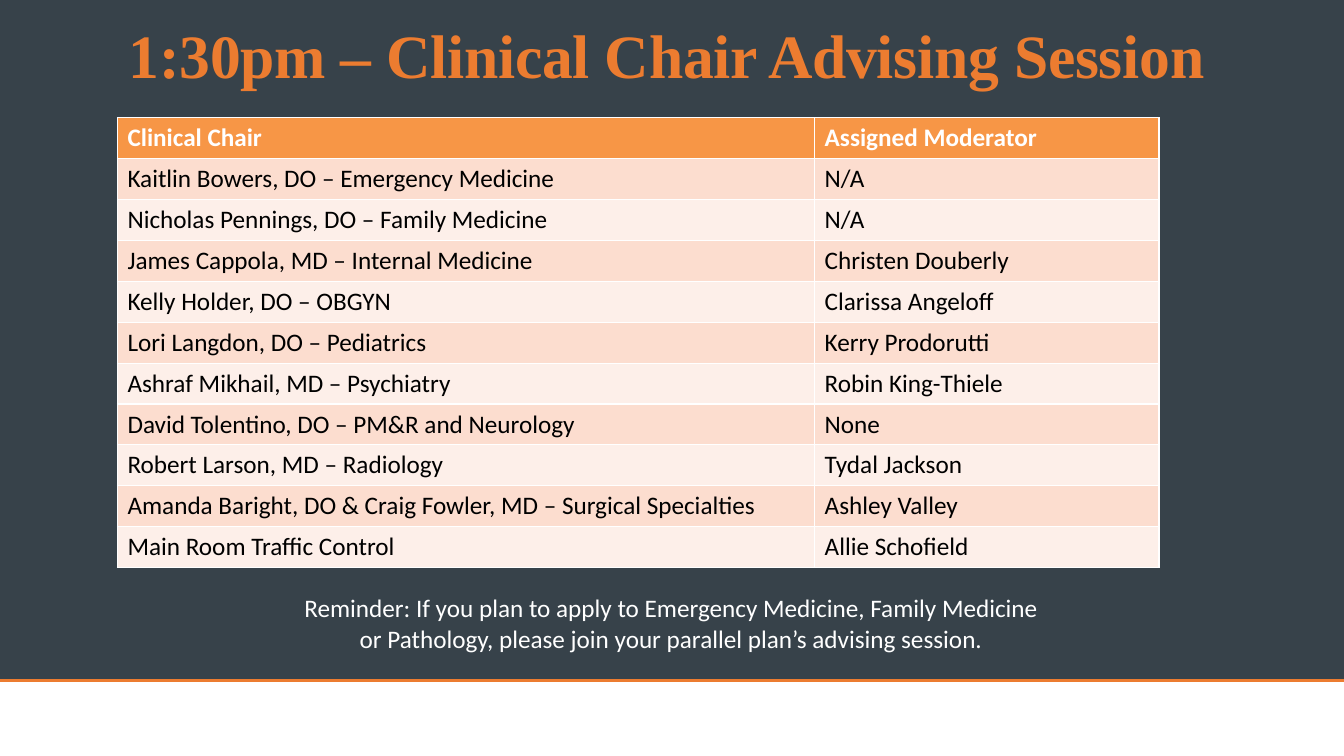
from pptx import Presentation
from pptx.dml.color import RGBColor
from pptx.enum.shapes import MSO_CONNECTOR, MSO_SHAPE
from pptx.enum.text import MSO_ANCHOR, MSO_AUTO_SIZE, PP_ALIGN
from pptx.oxml.ns import qn
from pptx.util import Cm, Pt
from lxml.etree import SubElement

ORANGE, WHITE, BLACK = "EC7C30", "FFFFFF", "000000"
HEADER_FILL, BAND_FILLS = "F79646", ("FDEFE9", "FCDDCF")
SLATE = "37424A"
SLIDE_WIDTH, SLIDE_HEIGHT, FOOTER_TOP = Cm(33.87), Cm(19.05), Cm(17.15)

ASSIGNMENTS = [
    ("Clinical Chair", "Assigned Moderator"),
    ("Kaitlin Bowers, DO – Emergency Medicine", "N/A"),
    ("Nicholas Pennings, DO – Family Medicine", "N/A"),
    ("James Cappola, MD – Internal Medicine", "Christen Douberly"),
    ("Kelly Holder, DO – OBGYN", "Clarissa Angeloff"),
    ("Lori Langdon, DO – Pediatrics", "Kerry Prodorutti"),
    ("Ashraf Mikhail, MD – Psychiatry", "Robin King-Thiele"),
    ("David Tolentino, DO – PM&R and Neurology", "None"),
    ("Robert Larson, MD – Radiology", "Tydal Jackson"),
    ("Amanda Baright, DO & Craig Fowler, MD – Surgical Specialties", "Ashley Valley"),
    ("Main Room Traffic Control", "Allie Schofield"),
]


def paint(fill, color):
    fill.solid()
    fill.fore_color.rgb = RGBColor.from_string(color)


def style_text(frame, font_name, size, color, bold=False):
    for paragraph in frame.paragraphs:
        for run in paragraph.runs:
            run.font.name = font_name
            run.font.size = Pt(size)
            run.font.bold = bold
            run.font.color.rgb = RGBColor.from_string(color)


prs = Presentation()
prs.slide_width, prs.slide_height = SLIDE_WIDTH, SLIDE_HEIGHT
slide = prs.slides.add_slide(prs.slide_layouts[5])
title = slide.shapes.title

# Backdrop, placed behind the title
for top, bottom, color in ((0, FOOTER_TOP, SLATE), (FOOTER_TOP, SLIDE_HEIGHT, WHITE)):
    area = slide.shapes.add_shape(MSO_SHAPE.RECTANGLE, 0, top, SLIDE_WIDTH, bottom - top)
    area.shadow.inherit = False
    paint(area.fill, color)
    area.line.fill.background()
    title.element.addprevious(area.element)

footer_rule = slide.shapes.add_connector(
    MSO_CONNECTOR.STRAIGHT, 0, FOOTER_TOP, SLIDE_WIDTH, FOOTER_TOP)
footer_rule.line.color.rgb = RGBColor.from_string(ORANGE)
footer_rule.line.width = Pt(2.25)
SubElement(footer_rule.element.spPr, qn("a:effectLst"))
title.element.addprevious(footer_rule.element)

# Title
title.left, title.top, title.width, title.height = Cm(0.28), Cm(0.28), Cm(33.3), Cm(2.16)
heading = title.text_frame
heading.text = "1:30pm – Clinical Chair Advising Session"
heading.margin_left = heading.margin_right = heading.margin_top = heading.margin_bottom = 0
heading.vertical_anchor = MSO_ANCHOR.MIDDLE
heading.auto_size = MSO_AUTO_SIZE.NONE
heading.paragraphs[0].alignment = PP_ALIGN.LEFT
heading.paragraphs[0]._p.get_or_add_pPr().set("marL", str(Cm(2.97)))
style_text(heading, "Times New Roman", 44, ORANGE, bold=True)
heading.paragraphs[0].runs[0].font._element.set("spc", "-20")

# Chairs and moderators
schedule = slide.shapes.add_table(
    len(ASSIGNMENTS), 2, Cm(2.96), Cm(2.97), Cm(26.25), Cm(11.33)).table
schedule.columns[0].width, schedule.columns[1].width = Cm(17.57), Cm(8.68)
for row, names in enumerate(ASSIGNMENTS):
    is_header = row == 0
    for column, name in enumerate(names):
        cell = schedule.cell(row, column)
        cell.text_frame.text = name
        paint(cell.fill, HEADER_FILL if is_header else BAND_FILLS[row % 2])
        style_text(cell.text_frame, "Calibri", 18, WHITE if is_header else BLACK, is_header)

# Reminder
reminder = slide.shapes.add_textbox(Cm(7.29), Cm(14.81), Cm(19.25), Cm(1.8)).text_frame
reminder.word_wrap = True
reminder.text = ("Reminder: If you plan to apply to Emergency Medicine, Family Medicine "
                 "or Pathology, please join your parallel plan’s advising session.")
reminder.paragraphs[0].alignment = PP_ALIGN.CENTER
style_text(reminder, "Calibri", 18, WHITE)

prs.save("out.pptx")
